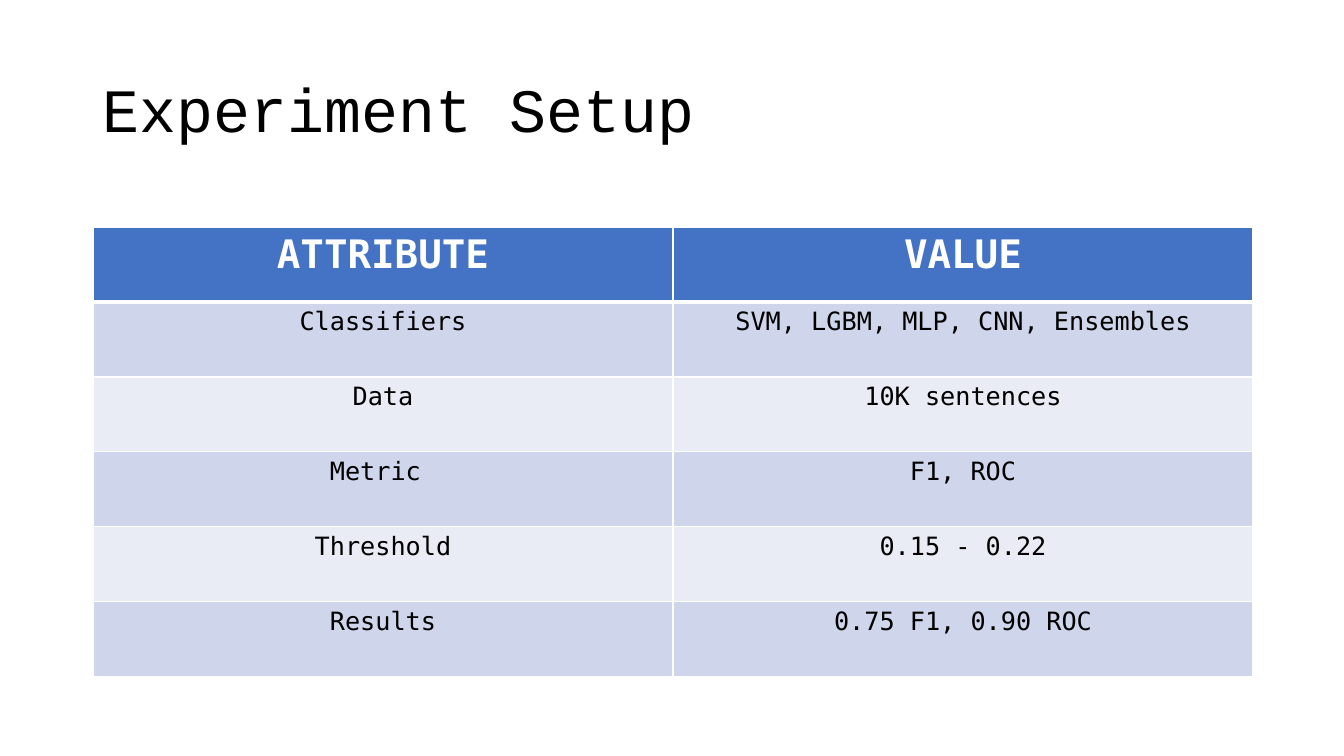
from dataclasses import dataclass

from lxml import etree
from pptx import Presentation
from pptx.dml.color import RGBColor
from pptx.enum.text import MSO_ANCHOR, PP_ALIGN
from pptx.oxml.ns import qn
from pptx.util import Pt

MIDDLE = MSO_ANCHOR.MIDDLE
LEFT, CENTER = PP_ALIGN.LEFT, PP_ALIGN.CENTER

TITLE = "Experiment Setup"
ROWS = [
    ("ATTRIBUTE", "VALUE"),
    ("Classifiers", "SVM, LGBM, MLP, CNN, Ensembles"),
    ("Data", "10K sentences"),
    ("Metric ", "F1, ROC"),
    ("Threshold", "0.15 - 0.22"),
    ("Results", "0.75 F1, 0.90 ROC"),
]

# Lengths in px
SCALE = 914400 / 100.8
SLIDE = (1344, 756)
MARGIN = 93
TITLE_TOP, TITLE_HIGH = 40, 146
TABLE_TOP, ROW_HIGH, COL_WIDE = 227, 75, 580


@dataclass(frozen=True)
class Theme:
    title_font: str = "Courier New"
    table_font: str = "DejaVu Sans Mono"
    title_size: int = 44
    head_size: int = 28
    body_size: int = 18
    ink: str = "000000"
    white: str = "FFFFFF"
    head_fill: str = "4472C4"
    bands: tuple = ("CFD5EA", "E9EBF5")
    rule: int = 1
    head_rule: int = 3


THEME = Theme()


def px(n):
    return round(n * SCALE)


def write(frame, text, font, size, color, align, bold=False):
    para = frame.paragraphs[0]
    para.alignment = align
    run = para.add_run()
    run.text = text
    run.font.name = font
    run.font.size = Pt(size)
    run.font.bold = bold
    run.font.color.rgb = RGBColor.from_string(color)
    return para


def add_border(cell, side, width):
    props = cell._tc.get_or_add_tcPr()
    line = etree.SubElement(props, qn("a:ln" + side), w=str(Pt(width)))
    fill = etree.SubElement(line, qn("a:solidFill"))
    etree.SubElement(fill, qn("a:srgbClr"), val=THEME.white)


def add_title(slide):
    wide = COL_WIDE * len(ROWS[0])
    box = slide.shapes.add_textbox(
        px(MARGIN), px(TITLE_TOP), px(wide), px(TITLE_HIGH))
    frame = box.text_frame
    frame.word_wrap = True
    frame.vertical_anchor = MIDDLE
    para = write(frame, TITLE, THEME.title_font, THEME.title_size,
                 THEME.ink, LEFT)
    para.line_spacing = 0.9


def add_grid(slide):
    rows, cols = len(ROWS), len(ROWS[0])
    table = slide.shapes.add_table(
        rows, cols, px(MARGIN), px(TABLE_TOP),
        px(COL_WIDE * cols), px(ROW_HIGH * rows)).table
    for r, row in enumerate(ROWS):
        head = r == 0
        fill = THEME.head_fill if head else THEME.bands[(r - 1) % 2]
        size = THEME.head_size if head else THEME.body_size
        color = THEME.white if head else THEME.ink
        for c, text in enumerate(row):
            cell = table.cell(r, c)
            write(cell.text_frame, text, THEME.table_font, size, color,
                  CENTER, head)
            for side in "LRTB":
                thick = (head and side == "B") or (r == 1 and side == "T")
                add_border(cell, side,
                           THEME.head_rule if thick else THEME.rule)
            cell.fill.solid()
            cell.fill.fore_color.rgb = RGBColor.from_string(fill)


def main():
    deck = Presentation()
    deck.slide_width, deck.slide_height = map(px, SLIDE)
    slide = deck.slides.add_slide(deck.slide_layouts[6])
    add_title(slide)
    add_grid(slide)
    deck.save("out.pptx")


if __name__ == "__main__":
    main()
